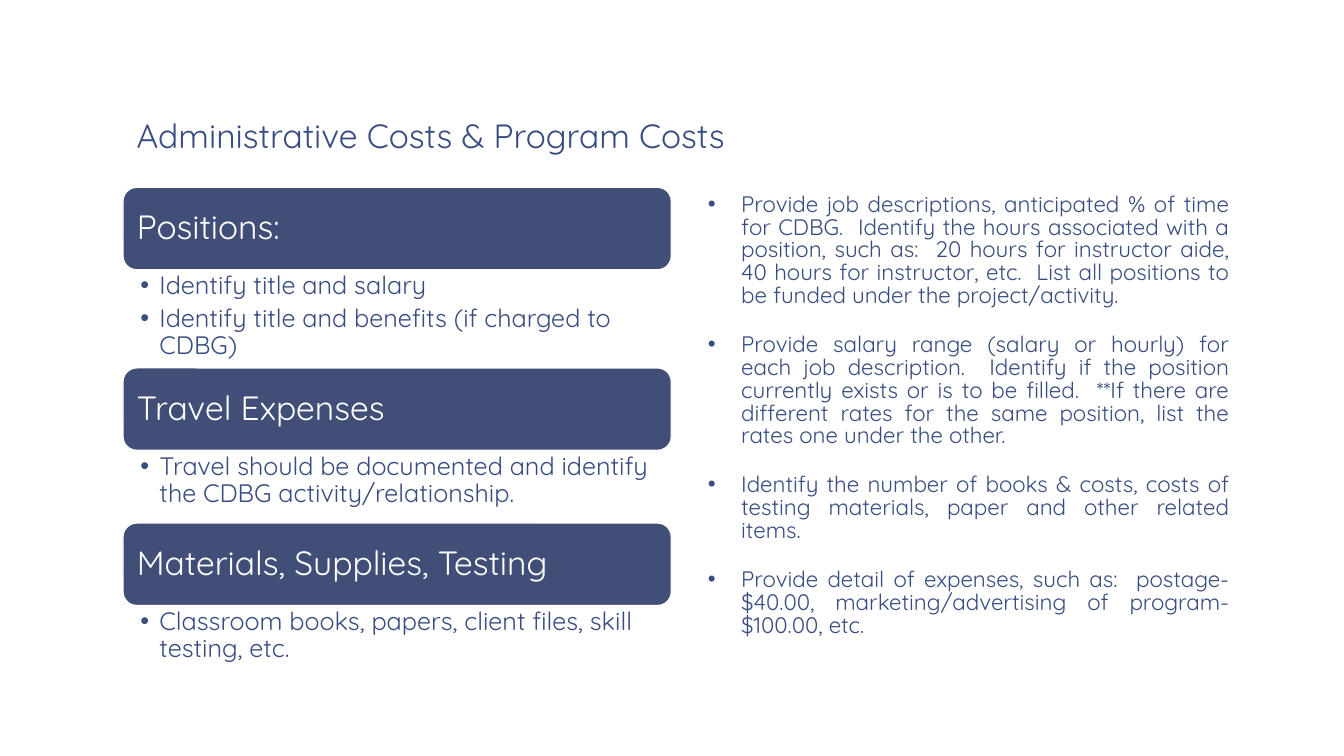
import pptx
import pptx.dml.color
import pptx.enum.shapes
import pptx.enum.text
import pptx.oxml
import pptx.oxml.ns
import pptx.util

Cm = pptx.util.Cm
Pt = pptx.util.Pt
ALIGN = pptx.enum.text.PP_ALIGN
ANCHOR = pptx.enum.text.MSO_ANCHOR


def colour(value):
    return pptx.dml.color.RGBColor.from_string(value)


class CostSlide:
    font = "Quicksand"
    ink = "374C81"
    bar_fill = "414E77"
    white = "FFFFFF"

    def __init__(self, presentation):
        self.slide = presentation.slides.add_slide(presentation.slide_layouts[5])
        self.slide.background.fill.solid()
        self.slide.background.fill.fore_color.rgb = colour(self.white)

    def frame(self, shape, insets, anchor):
        frame = shape.text_frame
        frame.word_wrap = True
        frame.auto_size = pptx.enum.text.MSO_AUTO_SIZE.NONE
        frame.vertical_anchor = anchor
        left, top, right, bottom = insets
        frame.margin_left, frame.margin_top = Cm(left), Cm(top)
        frame.margin_right, frame.margin_bottom = Cm(right), Cm(bottom)
        return frame

    def add_text(self, paragraph, text, size, ink, spacing, align=ALIGN.LEFT):
        paragraph.alignment = align
        paragraph.line_spacing = spacing
        run = paragraph.add_run()
        run.text = text
        run.font.name = self.font
        run.font.size = Pt(size)
        run.font.color.rgb = colour(ink)

    def title(self, text, left, top, width, height):
        title = self.slide.shapes.title
        title.left, title.top = Cm(left), Cm(top)
        title.width, title.height = Cm(width), Cm(height)
        frame = self.frame(title, (0.34, 0.17, 0.34, 0.17), ANCHOR.BOTTOM)
        self.add_text(frame.paragraphs[0], text, 24, self.ink, 0.85)

    def bar(self, text, left, top, width, height):
        bar = self.slide.shapes.add_shape(
            pptx.enum.shapes.MSO_SHAPE.ROUNDED_RECTANGLE,
            Cm(left), Cm(top), Cm(width), Cm(height))
        bar.shadow.inherit = False
        bar.fill.solid()
        bar.fill.fore_color.rgb = colour(self.bar_fill)
        bar.line.color.rgb = colour(self.white)
        bar.line.width = Pt(1)
        frame = self.frame(bar, (0.25,) * 4, ANCHOR.MIDDLE)
        self.add_text(frame.paragraphs[0], text, 24, self.white, 0.9)

    def bullets(self, items, left, top, width, height, insets, size, indent,
                spacing, before=0, after=0, align=ALIGN.LEFT):
        box = self.slide.shapes.add_textbox(Cm(left), Cm(top), Cm(width), Cm(height))
        frame = self.frame(box, insets, ANCHOR.TOP)
        for index, item in enumerate(items):
            paragraph = frame.add_paragraph() if index else frame.paragraphs[0]
            properties = paragraph._p.get_or_add_pPr()
            properties.set("marL", str(Cm(indent)))
            properties.set("indent", str(-Cm(indent)))
            for tag, key, value in (("buFont", "typeface", "Arial"), ("buChar", "char", "•")):
                mark = pptx.oxml.parse_xml(
                    f'<a:{tag} {pptx.oxml.ns.nsdecls("a")} {key}="{value}"/>')
                properties.append(mark)
            if index:
                paragraph.space_before = Pt(before)
            paragraph.space_after = Pt(after)
            self.add_text(paragraph, item, size, self.ink, spacing, align)


LEFT, TOP, COLUMN, GAP = 3.1, 4.72, 13.82, 0.58
BAR_HEIGHT = 2.08

CATEGORIES = [
    ("Positions:", 2.47, ["Identify title and salary",
                          "Identify title and benefits (if charged to CDBG)"]),
    ("Travel Expenses", 1.83, [
        "Travel should be documented and identify the CDBG activity/relationship."]),
    ("Materials, Supplies, Testing", 1.83, [
        "Classroom books, papers, client files, skill testing, etc."]),
]

INSTRUCTIONS = [
    "Provide job descriptions, anticipated % of time for CDBG.  Identify the hours "
    "associated with a position, such as:  20 hours for instructor aide, 40 hours for "
    "instructor, etc.  List all positions to be funded under the project/activity.",
    "Provide salary range (salary or hourly) for each job description.  Identify if the "
    "position currently exists or is to be filled.  **If there are different rates for "
    "the same position, list the rates one under the other.",
    "Identify the number of books & costs, costs of testing materials, paper and other "
    "related items.",
    "Provide detail of expenses, such as:  postage-$40.00, marketing/advertising of "
    "program-$100.00, etc.",
]


def main():
    presentation = pptx.Presentation()
    presentation.slide_width, presentation.slide_height = Cm(33.87), Cm(19.05)
    costs = CostSlide(presentation)
    costs.title("Administrative Costs & Program Costs", LEFT, 0.2, 2 * COLUMN + GAP, 3.89)

    top = TOP
    for heading, detail_height, details in CATEGORIES:
        costs.bar(heading, LEFT, top, COLUMN, BAR_HEIGHT)
        top += BAR_HEIGHT
        costs.bullets(details, LEFT, top, COLUMN, detail_height,
                      (0.44, 0.08, 0.36, 0.08), 18, 0.48, 0.9, after=3.6)
        top += detail_height

    costs.bullets(INSTRUCTIONS, LEFT + COLUMN + GAP, TOP, COLUMN, 12.42,
                  (0.34, 0.17, 0.34, 0.17), 16, 0.84, 0.85, before=18.7,
                  align=ALIGN.JUSTIFY)
    presentation.save("out.pptx")


if __name__ == "__main__":
    main()
